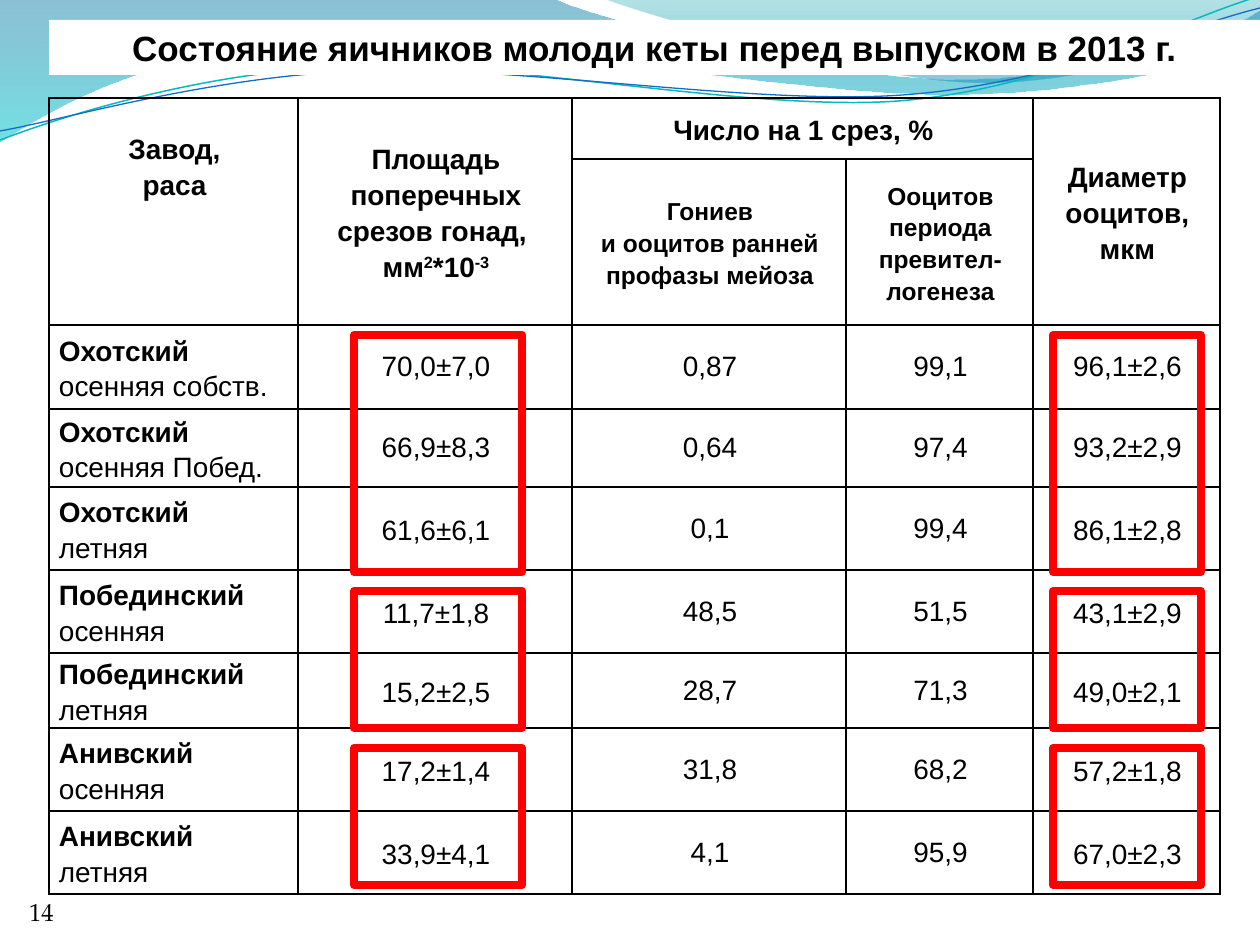
"""Slide with a table of chum salmon ovary measurements."""
from dataclasses import dataclass

import pptx
import pptx.dml.color
import pptx.enum.shapes
import pptx.enum.text
import pptx.oxml
import pptx.oxml.ns
import pptx.util
from lxml import etree

PX = 914400 // 126
SLIDE_W, SLIDE_H = 1260, 945
ALIGN = pptx.enum.text.PP_ALIGN
ANCHOR = pptx.enum.text.MSO_ANCHOR
RECT = pptx.enum.shapes.MSO_SHAPE.RECTANGLE
qn = pptx.oxml.ns.qn


@dataclass(frozen=True)
class Theme:
    """Colours, fonts and type sizes."""
    ink: str = "000000"
    paper: str = "FFFFFF"
    mark: str = "FF0000"
    teal_line: str = "0AB8BF"
    blue_line: str = "0F6FC6"
    left_band: tuple = ((0, "0074A1", 45), (1, "00C6CF", 55))
    right_band: tuple = ((0, "00A1A9", 30), (0.8, "008BBF", 45))
    sans: str = "Arial"
    serif: str = "TeX Gyre Pagella"
    title: int = 20
    body: int = 16
    small: int = 14
    spacing: float = 1.15


THEME = Theme()
COLUMNS = (249, 274, 274, 187, 187)
ROWS = (61, 166, 84, 78, 83, 83, 75, 83, 83)
HEADERS = (
    (0, 0, 1, 0, THEME.body, ("Завод,", "раса")),
    (0, 1, 1, 1, THEME.body, ("Площадь поперечных срезов гонад, ", "мм^2^*10^-3")),
    (0, 2, 0, 3, THEME.body, ("Число на 1 срез, %",)),
    (0, 4, 1, 4, THEME.body, ("Диаметр", "ооцитов,", "мкм")),
    (1, 2, 1, 2, THEME.small, ("Гониев", "и ооцитов ранней профазы мейоза")),
    (1, 3, 1, 3, THEME.small, ("Ооцитов периода превител-", "логенеза")),
)
DATA = (
    ("Охотский", "осенняя собств.", "70,0±7,0", "0,87", "99,1", "96,1±2,6"),
    ("Охотский", "осенняя Побед.", "66,9±8,3", "0,64", "97,4", "93,2±2,9"),
    ("Охотский", "летняя", "61,6±6,1", "0,1", "99,4", "86,1±2,8"),
    ("Побединский", "осенняя", "11,7±1,8", "48,5", "51,5", "43,1±2,9"),
    ("Побединский", "летняя", "15,2±2,5", "28,7", "71,3", "49,0±2,1"),
    ("Анивский", "осенняя", "17,2±1,4", "31,8", "68,2", "57,2±1,8"),
    ("Анивский", "летняя", "33,9±4,1", "4,1", "95,9", "67,0±2,3"),
)


def rgb(value):
    """Turn a hex string into a colour."""
    return pptx.dml.color.RGBColor.from_string(value)


def style(r, size, bold=False, name=THEME.sans):
    """Format one run."""
    r.font.name, r.font.size, r.font.bold = name, pptx.util.Pt(size), bold
    r.font.color.rgb = rgb(THEME.ink)


def place(sp, x, y, w, h):
    """Move a shape to a box in px."""
    sp.left, sp.top, sp.width, sp.height = (v * PX for v in (x, y, w, h))


def add_curve(s, x, y, start, segments, close):
    """Draw an outline of lines (one point) and cubic curves (three points)."""
    points = [(x + a, y + b) for seg in segments for a, b in seg]
    builder = s.shapes.build_freeform(x + start[0], y + start[1], scale=PX)
    builder.add_line_segments(points, close=close)
    sp = builder.convert_to_shape()
    sp.shadow.inherit = False
    lines = list(sp.element.iter(qn("a:lnTo")))
    for seg in segments:
        nodes, lines = lines[:len(seg)], lines[len(seg):]
        if len(seg) == 3:
            curve = pptx.oxml.parse_xml(f'<a:cubicBezTo {pptx.oxml.ns.nsdecls("a")}/>')
            nodes[0].addprevious(curve)
            for node in nodes:
                curve.append(node[0])
                node.getparent().remove(node)
    return sp


def add_waves(s, x, y):
    """Draw the two gradient bands and two thin waves."""
    bands = (
        (THEME.left_band, (0, 0), (
            ((554, -1),),
            ((600, 21), (837, 79), (955, 79)), ((1075, 79), (1207, 47), (1260, 11)),
            ((1261, 45),),
            ((1239, 55), (1096, 96), (940, 94)), ((784, 94), (481, 35), (324, 43)),
            ((163, 45), (58, 105), (-1, 142)))),
        (THEME.right_band, (604, -1), (
            ((641, 14), (859, 78), (969, 82)), ((1079, 87), (1211, 40), (1260, 26)),
            ((1260, 0),))),
    )
    for stops, start, segments in bands:
        sp = add_curve(s, x, y, start, segments, True)
        sp.line.fill.background()
        sp.fill.gradient()
        sp.fill.gradient_angle = 270
        for stop, (position, color, _) in zip(sp.fill.gradient_stops, stops):
            stop.position, stop.color.rgb = position, rgb(color)
        for node, (_, _, alpha) in zip(sp.element.iter(qn("a:srgbClr")), stops):
            etree.SubElement(node, qn("a:alpha"), val=str(alpha * 1000))
    lines = (
        (THEME.teal_line, 0.85, (0, 140), (
            ((60, 117), (199, 72), (349, 66)), ((498, 59), (747, 112), (898, 101)),
            ((1050, 89), (1182, 19), (1257, -3)))),
        (THEME.blue_line, 0.75, (0, 131), (
            ((59, 121), (207, 77), (357, 71)), ((508, 64), (752, 106), (903, 95)),
            ((1053, 84), (1186, 26), (1260, 8)))),
    )
    for color, width, start, segments in lines:
        sp = add_curve(s, x, y, start, segments, False)
        sp.fill.background()
        sp.line.color.rgb, sp.line.width = rgb(color), pptx.util.Pt(width)


def add_text(p, text, size, bold):
    """Add runs; every second part between carets is superscript."""
    for k, part in enumerate(text.split("^")):
        r = p.add_run()
        r.text = part
        style(r, size, bold)
        if k % 2:
            r.font._element.set("baseline", "30000")


def fill_cell(cell, lines, size, bolds, align, spacing):
    """Write one paragraph for each line."""
    tf = cell.text_frame
    for i, (line, bold) in enumerate(zip(lines, bolds)):
        p = tf.paragraphs[0] if i == 0 else tf.add_paragraph()
        p.alignment, p.line_spacing = align, spacing
        add_text(p, line, size, bold)


def frame_cell(cell):
    """Give a cell black borders, no fill and narrow margins."""
    tc_pr = cell._tc.get_or_add_tcPr()
    for side in ("lnL", "lnR", "lnT", "lnB"):
        ln = etree.SubElement(tc_pr, qn(f"a:{side}"), w="12700")
        fill = etree.SubElement(ln, qn("a:solidFill"))
        etree.SubElement(fill, qn("a:srgbClr"), val=THEME.ink)
    cell.fill.background()
    cell.margin_left, cell.margin_right = 10 * PX, 8 * PX
    cell.margin_top = cell.margin_bottom = 0
    cell.vertical_anchor = ANCHOR.MIDDLE


def add_measurements(s, x, y):
    """Build the table with its two-level header."""
    table = s.shapes.add_table(len(ROWS), len(COLUMNS), x * PX, y * PX,
                               sum(COLUMNS) * PX, sum(ROWS) * PX).table
    table.first_row = table.horz_banding = False
    for items, sizes, side in ((table.columns, COLUMNS, "width"), (table.rows, ROWS, "height")):
        for item, size in zip(items, sizes):
            setattr(item, side, size * PX)
    for cell in table.iter_cells():
        frame_cell(cell)
    for top, left, bottom, right, size, lines in HEADERS:
        cell = table.cell(top, left)
        if (top, left) != (bottom, right):
            cell.merge(table.cell(bottom, right))
        fill_cell(cell, lines, size, [True] * len(lines), ALIGN.CENTER, THEME.spacing)
    table.cell(0, 0).vertical_anchor = ANCHOR.TOP
    table.cell(0, 0).margin_top = 32 * PX
    for row, (plant, race, *values) in enumerate(DATA, 2):
        cell = table.cell(row, 0)
        if (plant, race) == ("Побединский", "осенняя"):
            fill_cell(cell, (plant + " ",), THEME.body, (True,), ALIGN.LEFT, THEME.spacing)
            add_text(cell.text_frame.paragraphs[0], race, THEME.body, False)
        else:
            fill_cell(cell, (plant, race), THEME.body, (True, False), ALIGN.LEFT, THEME.spacing)
        for col, value in enumerate(values, 1):
            spacing = THEME.spacing if row > 3 and col in (1, 4) else 1.0
            fill_cell(table.cell(row, col), (value,), THEME.body, (False,), ALIGN.CENTER, spacing)


def add_marks(s, x, y):
    """Outline the grouped values in the area and diameter columns."""
    for dx, w in ((0, 168), (699, 148)):
        for dy, h in ((0, 237), (256, 137), (413, 137)):
            sp = s.shapes.add_shape(RECT, 0, 0, 0, 0)
            place(sp, x + dx, y + dy, w, h)
            sp.shadow.inherit = False
            sp.fill.background()
            sp.line.color.rgb, sp.line.width = rgb(THEME.mark), pptx.util.Pt(4.5)


def add_title(s, x, y, w, h):
    """Put the title on a white strip above the table and waves."""
    sp = s.shapes.title
    place(sp, x, y, w, h)
    sp.fill.solid()
    sp.fill.fore_color.rgb = rgb(THEME.paper)
    tf = sp.text_frame
    tf.text = "Состояние яичников молоди кеты перед выпуском в 2013 г."
    tf.vertical_anchor, tf.auto_size = ANCHOR.MIDDLE, pptx.enum.text.MSO_AUTO_SIZE.NONE
    tf.paragraphs[0].alignment = ALIGN.CENTER
    style(tf.paragraphs[0].runs[0], THEME.title, True)
    sp.element.getparent().append(sp.element)


def add_page_number(s, x, y, w, h):
    """Write the page number at the bottom left."""
    tf = s.shapes.add_textbox(x * PX, y * PX, w * PX, h * PX).text_frame
    tf.text, tf.word_wrap, tf.vertical_anchor = "14", True, ANCHOR.BOTTOM
    tf.margin_left = tf.margin_right = tf.margin_top = tf.margin_bottom = 0
    style(tf.paragraphs[0].runs[0], THEME.small, name=THEME.serif)


def main():
    """Build and save the slide."""
    prs = pptx.Presentation()
    prs.slide_width, prs.slide_height = pptx.util.Inches(10), pptx.util.Inches(7.5)
    s = prs.slides.add_slide(prs.slide_layouts[5])
    add_waves(s, 0, 0)
    add_measurements(s, 49, 98)
    add_title(s, 49, 20, 1211, 55)
    add_marks(s, 354, 335)
    add_page_number(s, 29, 876, 294, 50)
    prs.save("out.pptx")


if __name__ == "__main__":
    main()
